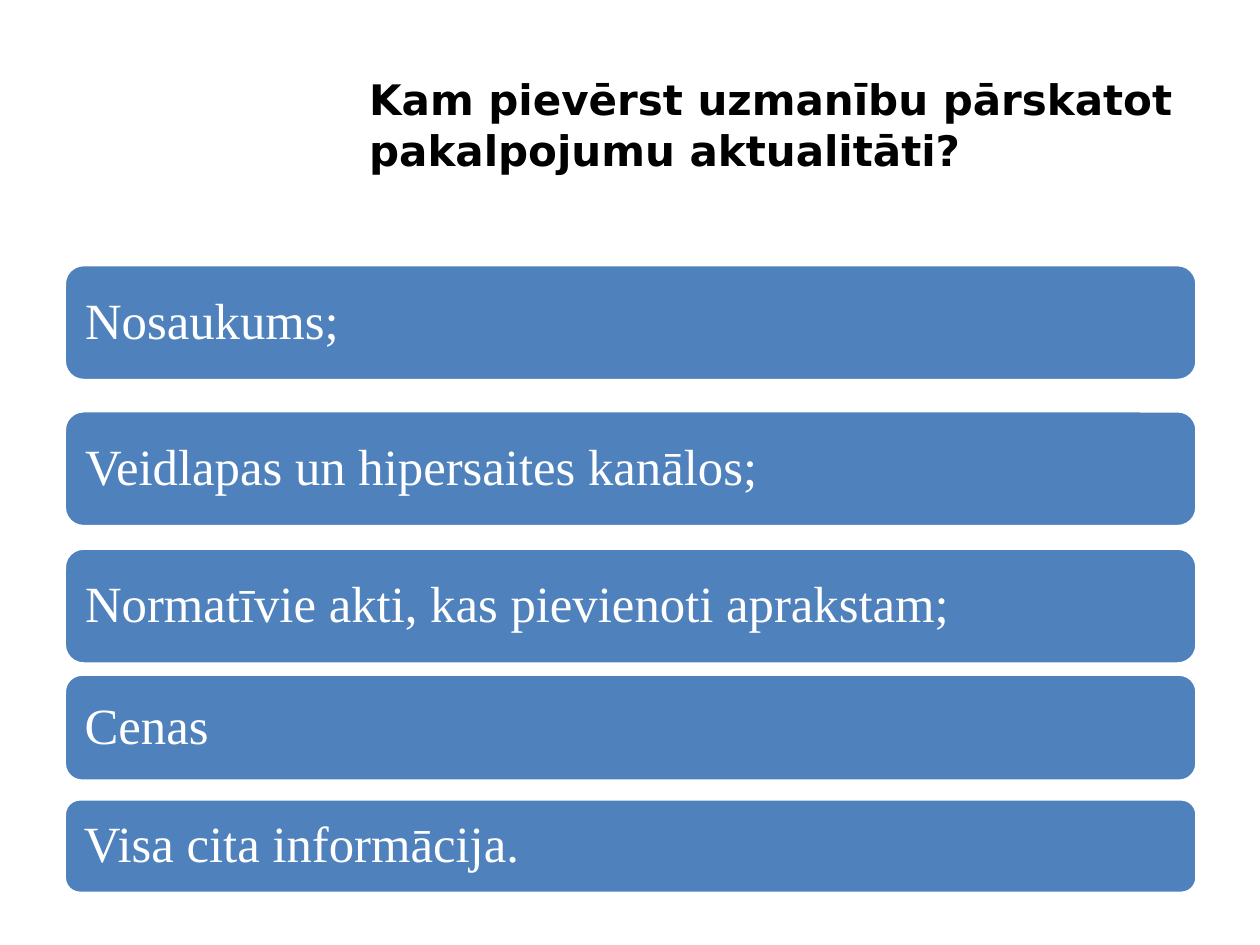
from pptx import Presentation
from pptx.dml.color import RGBColor
from pptx.enum.shapes import MSO_SHAPE
from pptx.enum.text import MSO_ANCHOR, PP_ALIGN
from pptx.util import Inches, Pt

BLACK = RGBColor(0x00, 0x00, 0x00)
WHITE = RGBColor(0xFF, 0xFF, 0xFF)
BLUE = RGBColor(0x4F, 0x81, 0xBD)

TITLE = "Kam pievērst uzmanību pārskatot pakalpojumu aktualitāti?"
# Text, top and height of each bar
BARS = [
    ("Nosaukums;", 2.1, 0.92),
    ("Veidlapas un hipersaites kanālos;", 3.26, 0.92),
    ("Normatīvie akti, kas pievienoti aprakstam;", 4.35, 0.92),
    ("Cenas", 5.35, 0.85),
    ("Visa cita informācija.", 6.34, 0.75),
]


def write_text(shape, text, *, font, size, color, bold=False, spacing=1.0,
               margins=(0.1, 0.05)):
    frame = shape.text_frame
    frame.word_wrap = True
    frame.vertical_anchor = MSO_ANCHOR.MIDDLE
    frame.margin_left = frame.margin_right = Inches(margins[0])
    frame.margin_top = frame.margin_bottom = Inches(margins[1])
    para = frame.paragraphs[0]
    para.alignment = PP_ALIGN.LEFT
    para.line_spacing = spacing
    span = para.add_run()
    span.text = text
    span.font.name = font
    span.font.size = Pt(size)
    span.font.bold = bold
    span.font.color.rgb = color


def place_title(page, left, top, width, height):
    title = page.shapes.title
    title.left, title.top = Inches(left), Inches(top)
    title.width, title.height = Inches(width), Inches(height)
    write_text(title, TITLE, font="DejaVu Sans", size=24, color=BLACK, bold=True)


def place_bars(page, left, width):
    for text, top, height in BARS:
        bar = page.shapes.add_shape(
            MSO_SHAPE.ROUNDED_RECTANGLE,
            Inches(left), Inches(top), Inches(width), Inches(height))
        bar.shadow.inherit = False
        bar.fill.solid()
        bar.fill.fore_color.rgb = BLUE
        bar.line.color.rgb = WHITE
        bar.line.width = Pt(2)
        write_text(bar, text, font="Times New Roman", size=29, color=WHITE,
                   spacing=0.9, margins=(0.12, 0.12))


def main():
    deck = Presentation()
    deck.slide_width, deck.slide_height = Inches(10), Inches(7.5)
    page = deck.slides.add_slide(deck.slide_layouts.get_by_name("Title Only"))
    place_title(page, 2.83, 0.42, 6.67, 1.13)
    place_bars(page, 0.51, 8.99)
    deck.save("out.pptx")


if __name__ == "__main__":
    main()
